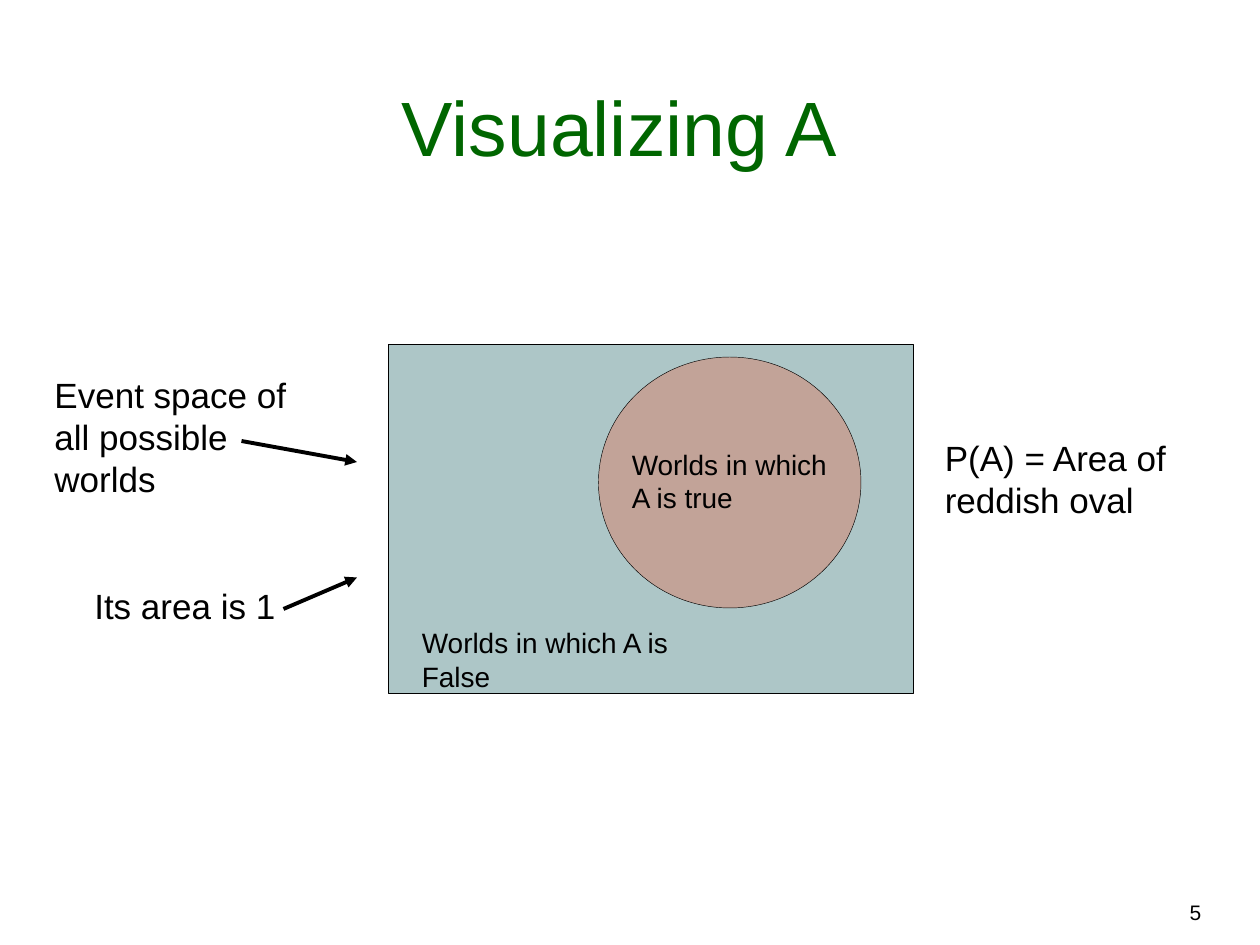
"""Build the slide that shows the probability of A as an area of the event space."""
from lxml.etree import SubElement
from pptx import Presentation
from pptx.dml.color import RGBColor
from pptx.enum.shapes import MSO_CONNECTOR, MSO_SHAPE
from pptx.enum.text import MSO_ANCHOR, PP_ALIGN
from pptx.oxml.ns import qn
from pptx.util import Inches, Pt

BLACK = RGBColor(0x00, 0x00, 0x00)
GREEN = RGBColor(0x00, 0x66, 0x00)
BLUE_GREY = RGBColor(0xAD, 0xC6, 0xC7)
REDDISH = RGBColor(0xC2, 0xA3, 0x98)

FONT = "Arial"
COLUMNS, ROWS = 120, 90
WIDTH, HEIGHT = Inches(10), Inches(7.5)

AREAS = [
    (MSO_SHAPE.RECTANGLE, (37, 32.8, 50, 33.2), BLUE_GREY),
    (MSO_SHAPE.OVAL, (57, 34, 25, 23.9), REDDISH),
]
TEXTS = [
    ("5", (68.6, 85.1, 47, 3.6), {"size": 12, "align": PP_ALIGN.RIGHT}),
    ("Visualizing A", (3, 3, 112, 14),
     {"size": 44, "color": GREEN, "align": PP_ALIGN.CENTER, "anchor": MSO_ANCHOR.BOTTOM}),
    ("Event space of all possible worlds", (4, 35, 28, 13.2), {}),
    ("Its area is 1", (7.8, 55.1, 20, 5.2), {"wrap": False}),
    ("Worlds in which A is False", (39, 59, 32, 4.4), {"size": 16}),
    ("Worlds in which A is true", (59, 42, 22.2, 7.7), {"size": 16}),
    ("P(A) = Area of\nreddish oval", (88.8, 41, 23.9, 9.2), {"wrap": False}),
]
ARROWS = [
    ((23, 42), (34, 44)),
    ((27, 58), (34, 55)),
]


def place(*cells):
    """Turn alternating column and row counts into slide lengths."""
    units = (WIDTH / COLUMNS, HEIGHT / ROWS)
    return [round(cell * units[index % 2]) for index, cell in enumerate(cells)]


def add_area(slide, kind, box, color):
    """Add a filled area with a hairline outline."""
    shape = slide.shapes.add_shape(kind, *place(*box))
    shape.shadow.inherit = False
    shape.fill.solid()
    shape.fill.fore_color.rgb = color
    shape.line.color.rgb = BLACK
    shape.line.width = Pt(0.25)


def add_text(slide, text, box, size=20, color=BLACK, align=PP_ALIGN.LEFT,
             anchor=MSO_ANCHOR.TOP, wrap=True):
    """Add a text box with one paragraph for each line of text."""
    frame = slide.shapes.add_textbox(*place(*box)).text_frame
    frame.word_wrap = wrap
    frame.vertical_anchor = anchor
    frame.text = text
    for paragraph in frame.paragraphs:
        paragraph.alignment = align
        font = paragraph.runs[0].font
        font.name, font.size = FONT, Pt(size)
        font.color.rgb = color


def add_arrow(slide, start, end):
    """Add a straight arrow with a triangular head at its end."""
    arrow = slide.shapes.add_connector(MSO_CONNECTOR.STRAIGHT, *place(*start, *end))
    arrow.line.color.rgb = BLACK
    arrow.line.width = Pt(2.25)
    SubElement(arrow.line._get_or_add_ln(), qn("a:tailEnd"), type="triangle")
    SubElement(arrow._element.spPr, qn("a:effectLst"))


def main():
    """Build and save the presentation."""
    presentation = Presentation()
    presentation.slide_width, presentation.slide_height = WIDTH, HEIGHT
    slide = presentation.slides.add_slide(presentation.slide_layouts[6])
    for kind, box, color in AREAS:
        add_area(slide, kind, box, color)
    for text, box, style in TEXTS:
        add_text(slide, text, box, **style)
    for start, end in ARROWS:
        add_arrow(slide, start, end)
    presentation.save("out.pptx")


if __name__ == "__main__":
    main()
